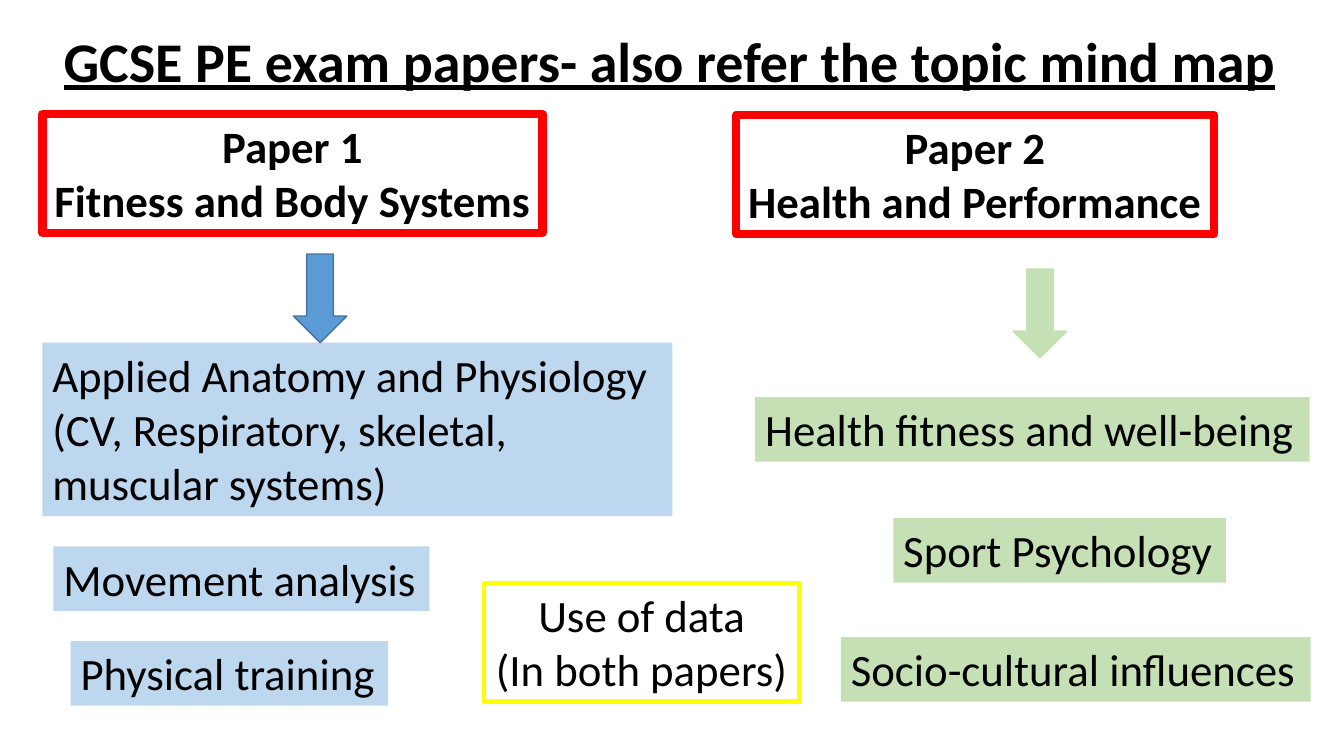
import dataclasses

import pptx
import pptx.dml.color
import pptx.enum.shapes
import pptx.enum.text
import pptx.util

Inches = pptx.util.Inches
Align = pptx.enum.text.PP_ALIGN


@dataclasses.dataclass(frozen=True)
class Theme:
    font: str = "Calibri"
    title_size: int = 40
    body_size: int = 32
    text: str = "000000"
    heading_line: str = "FF0000"
    shared_line: str = "FFFF00"
    blue: str = "BDD7EE"
    green: str = "C5E0B4"
    arrow_blue: str = "5B9BD5"
    arrow_blue_line: str = "43739E"


THEME = Theme()


def color(value):
    return pptx.dml.color.RGBColor.from_string(value)


def place(shape, box):
    shape.left, shape.top, shape.width, shape.height = map(Inches, box)


def offset(box, part):
    """Turn a part given relative to a region into a slide position."""
    return (box[0] + part[0], box[1] + part[1], part[2], part[3])


def set_line(shape, line, width):
    shape.line.color.rgb = color(line)
    shape.line.width = pptx.util.Pt(width)


def write_text(shape, text, size, align, bold=False, underline=False, wrap=False):
    frame = shape.text_frame
    frame.text = text
    frame.word_wrap = wrap
    frame.auto_size = pptx.enum.text.MSO_AUTO_SIZE.SHAPE_TO_FIT_TEXT
    for paragraph in frame.paragraphs:
        paragraph.alignment = align
        for run in paragraph.runs:
            run.font.name = THEME.font
            run.font.size = pptx.util.Pt(size)
            run.font.bold = bold
            run.font.underline = underline
            run.font.color.rgb = color(THEME.text)


def add_title(slide, box, text):
    title = slide.shapes.title
    place(title, box)
    title.text_frame.vertical_anchor = pptx.enum.text.MSO_ANCHOR.TOP
    write_text(title, text, THEME.title_size, Align.LEFT, bold=True, underline=True)


def add_framed_box(slide, box, text, line, width, bold=False):
    frame = slide.shapes.add_textbox(*map(Inches, box))
    set_line(frame, line, width)
    write_text(frame, text, THEME.body_size, Align.CENTER, bold)


def add_topic(slide, box, text, fill):
    topic = slide.shapes.add_textbox(*map(Inches, box))
    topic.fill.solid()
    topic.fill.fore_color.rgb = color(fill)
    write_text(topic, text, THEME.body_size, Align.LEFT, wrap="\n" in text)


def add_arrow(slide, box, fill, line):
    arrow = slide.shapes.add_shape(
        pptx.enum.shapes.MSO_SHAPE.DOWN_ARROW, *map(Inches, box))
    arrow.shadow.inherit = False
    arrow.fill.solid()
    arrow.fill.fore_color.rgb = color(fill)
    set_line(arrow, line, 1)


def add_paper(slide, box, heading, topics, topic_fill, arrow, arrow_fill, arrow_line):
    """Framed heading at the top of the box, then its topics and an arrow."""
    add_framed_box(slide, (*box[:2], box[2], 1.18), heading,
                   THEME.heading_line, 6, bold=True)
    for text, part in topics:
        add_topic(slide, offset(box, part), text, topic_fill)
    add_arrow(slide, offset(box, arrow), arrow_fill, arrow_line)


def main():
    presentation = pptx.Presentation()
    presentation.slide_width = Inches(13.33)
    presentation.slide_height = Inches(7.5)
    slide = presentation.slides.add_slide(presentation.slide_layouts[5])

    add_title(slide, (0.53, 0.21, 12.35, 0.77),
              "GCSE PE exam papers- also refer the topic mind map")

    # Paper 1 column
    add_paper(slide, (0.42, 1.13, 4.96, 5.87), "Paper 1\nFitness and Body Systems", [
        ("Applied Anatomy and Physiology\n(CV, Respiratory, skeletal, muscular systems)",
         (0, 2.27, 6.25, 1.72)),
        ("Movement analysis", (0.11, 4.29, 3.73, 0.64)),
        ("Physical training", (0.28, 5.23, 3.15, 0.64)),
    ], THEME.blue, (2.49, 1.39, 0.53, 0.88), THEME.arrow_blue, THEME.arrow_blue_line)

    # Paper 2 column
    add_paper(slide, (7.3, 1.14, 4.74, 5.82), "Paper 2\nHealth and Performance", [
        ("Health fitness and well-being", (0.19, 2.8, 5.5, 0.64)),
        ("Sport Psychology", (1.56, 4, 3.3, 0.64)),
        ("Socio-cultural influences", (1.04, 5.18, 4.66, 0.64)),
    ], THEME.green, (2.75, 1.53, 0.53, 0.88), THEME.green, THEME.green)

    # Topic shared by both papers
    add_framed_box(slide, (4.8, 5.78, 3.13, 1.18), "Use of data\n(In both papers)",
                   THEME.shared_line, 3)

    presentation.save("out.pptx")


if __name__ == "__main__":
    main()
